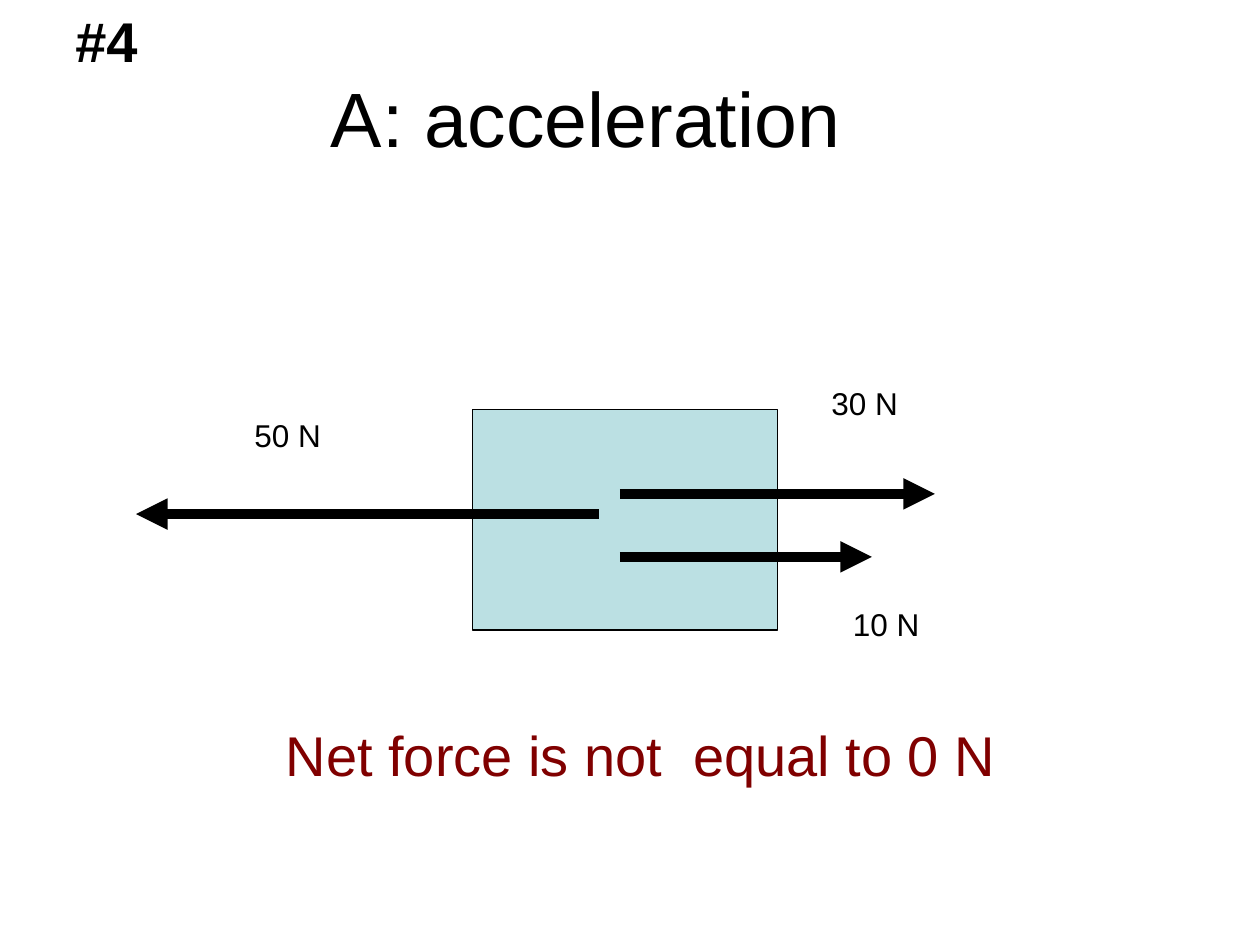
import pptx
import pptx.dml.color
import pptx.enum.shapes
import pptx.enum.text
import pptx.oxml.ns
import pptx.util
from dataclasses import dataclass
from lxml import etree

Inches = pptx.util.Inches
Pt = pptx.util.Pt
PP_ALIGN = pptx.enum.text.PP_ALIGN
MSO_ANCHOR = pptx.enum.text.MSO_ANCHOR
MSO_AUTO_SIZE = pptx.enum.text.MSO_AUTO_SIZE


@dataclass(frozen=True)
class Theme:
    font: str = "Arial"
    ink: str = "000000"
    box_fill: str = "BBE0E3"
    accent: str = "800000"
    background: str = "FFFFFF"
    title_size: int = 44
    heading_size: int = 32
    label_size: int = 18
    outline: float = 0.75
    arrow: float = 6


def rgb(value):
    return pptx.dml.color.RGBColor.from_string(value)


def write_text(tf, text, *, font, size, color, bold=False, align=PP_ALIGN.LEFT):
    p = tf.paragraphs[0]
    p.alignment = align
    p.space_before = Pt(0)
    r = p.add_run()
    r.text = text
    r.font.name = font
    r.font.size = Pt(size)
    r.font.bold = bold
    r.font.color.rgb = rgb(color)


class ForceSlide:
    def __init__(self, s, theme):
        self.s = s
        self.theme = theme
        s.background.fill.solid()
        s.background.fill.fore_color.rgb = rgb(theme.background)

    def title(self, text, left, top, width, height, right_inset):
        sp = self.s.shapes.title
        sp.left, sp.top = Inches(left), Inches(top)
        sp.width, sp.height = Inches(width), Inches(height)
        tf = sp.text_frame
        tf.auto_size = MSO_AUTO_SIZE.NONE
        tf.vertical_anchor = MSO_ANCHOR.MIDDLE
        tf.margin_right = Inches(right_inset)
        write_text(tf, text, font=self.theme.font, size=self.theme.title_size,
                   color=self.theme.ink, align=PP_ALIGN.CENTER)

    def box(self, left, top, width, height):
        sp = self.s.shapes.add_shape(
            pptx.enum.shapes.MSO_SHAPE.RECTANGLE,
            Inches(left), Inches(top), Inches(width), Inches(height))
        sp.shadow.inherit = False
        sp.fill.solid()
        sp.fill.fore_color.rgb = rgb(self.theme.box_fill)
        sp.line.color.rgb = rgb(self.theme.ink)
        sp.line.width = Pt(self.theme.outline)

    def arrow(self, start, end, y):
        line = self.s.shapes.add_connector(
            pptx.enum.shapes.MSO_CONNECTOR.STRAIGHT,
            Inches(start), Inches(y), Inches(end), Inches(y))
        line.line.color.rgb = rgb(self.theme.ink)
        line.line.width = Pt(self.theme.arrow)
        qn = pptx.oxml.ns.qn
        etree.SubElement(line.line._get_or_add_ln(), qn("a:tailEnd"), type="triangle")
        etree.SubElement(line._element.spPr, qn("a:effectLst"))

    def text(self, text, left, top, width, height, size, **style):
        sp = self.s.shapes.add_textbox(
            Inches(left), Inches(top), Inches(width), Inches(height))
        tf = sp.text_frame
        tf.word_wrap = True
        tf.auto_size = MSO_AUTO_SIZE.SHAPE_TO_FIT_TEXT
        write_text(tf, text, size=size,
                   **{"font": self.theme.font, "color": self.theme.ink, **style})


def main():
    theme = Theme()
    prs = pptx.Presentation()
    prs.slide_width, prs.slide_height = Inches(10), Inches(7.5)
    slide = ForceSlide(prs.slides.add_slide(prs.slide_layouts[5]), theme)

    # Title, set left of centre by a wider right inset
    slide.title("A: acceleration", 0.5, 0.3, 9, 1.25, right_inset=0.8)

    # Body on which the forces act
    slide.box(3.75, 3.25, 2.42, 1.75)

    # Force arrows: start x, end x, y
    for start, end, y in [(4.92, 7.42, 3.92), (4.92, 6.92, 4.42), (4.75, 1.08, 4.08)]:
        slide.arrow(start, end, y)

    # Force labels
    for label, left, top, width in [("50 N", 1.92, 3.25, 1.42),
                                    ("30 N", 6.5, 3, 1.08),
                                    ("10 N", 6.67, 4.75, 1.5)]:
        slide.text(label, left, top, width, 0.4, theme.label_size)

    # Question number and conclusion
    slide.text("#4", 0.5, 0, 1.17, 0.63, theme.heading_size, bold=True)
    slide.text("Net force is not  equal to 0 N", 2.17, 5.67, 6.17, 0.63,
               theme.heading_size, color=theme.accent)

    prs.save("out.pptx")


if __name__ == "__main__":
    main()
